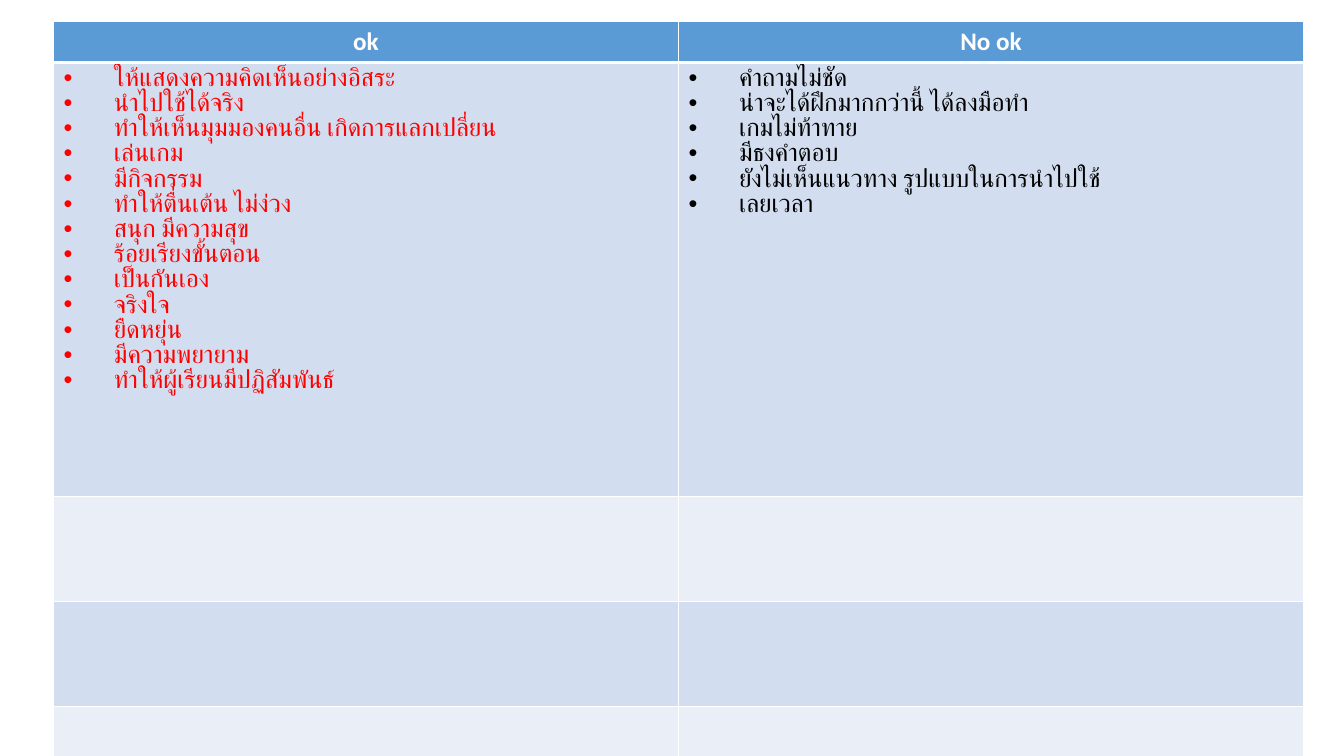
from lxml.etree import SubElement
from pptx import Presentation
from pptx.dml.color import RGBColor
from pptx.enum.text import PP_ALIGN
from pptx.oxml.ns import qn
from pptx.util import Inches, Pt

COLORS = {
    "header": "5B9BD5",
    "band_dark": "D2DEEF",
    "band_light": "EAEFF7",
    "white": "FFFFFF",
    "liked": "FF0000",
    "disliked": "000000",
}
LIKED = [
    "ให้แสดงความคิดเห็นอย่างอิสระ",
    "นำไปใช้ได้จริง",
    "ทำให้เห็นมุมมองคนอื่น เกิดการแลกเปลี่ยน",
    "เล่นเกม",
    "มีกิจกรรม",
    "ทำให้ตื่นเต้น ไม่ง่วง",
    "สนุก มีความสุข",
    "ร้อยเรียงขั้นตอน",
    "เป็นกันเอง",
    "จริงใจ",
    "ยืดหยุ่น",
    "มีความพยายาม",
    "ทำให้ผู้เรียนมีปฏิสัมพันธ์",
]
DISLIKED = [
    "คำถามไม่ชัด",
    "น่าจะได้ฝึกมากกว่านี้ ได้ลงมือทำ",
    "เกมไม่ท้าทาย",
    "มีธงคำตอบ",
    "ยังไม่เห็นแนวทาง รูปแบบในการนำไปใช้",
    "เลยเวลา",
]
ROW_HEIGHTS = [0.41, 4.31] + [1.04] * 5


class FeedbackSlide:
    """Hold the style and the current slide, and add its elements."""

    def __init__(self, deck):
        self.page = deck.slides.add_slide(deck.slide_layouts[6])
        self.size = Pt(18)

    def add_table(self, left, top, widths, heights):
        frame = self.page.shapes.add_table(
            len(heights), len(widths), Inches(left), Inches(top),
            Inches(sum(widths)), Inches(sum(heights)))
        table = frame.table
        for column, width in zip(table.columns, widths):
            column.width = Inches(width)
        for index, height in enumerate(heights):
            table.rows[index].height = Inches(height)
            band = "band_dark" if index % 2 else "band_light"
            for cell in table.rows[index].cells:
                self.style_cell(cell, band if index else "header", 1 if index else 3)
        return table

    def style_cell(self, cell, color, bottom):
        properties = cell._tc.get_or_add_tcPr()
        for side, width in (("L", 1), ("R", 1), ("T", 1), ("B", bottom)):
            line = SubElement(properties, qn(f"a:ln{side}"), w=str(Pt(width)))
            fill = SubElement(line, qn("a:solidFill"))
            SubElement(fill, qn("a:srgbClr"), val=COLORS["white"])
        cell.fill.solid()
        cell.fill.fore_color.rgb = RGBColor.from_string(COLORS[color])

    def add_text(self, paragraph, text, font, color, bold):
        span = paragraph.add_run()
        span.text = text
        span.font.size = self.size
        span.font.name = font
        span.font.bold = bold
        span.font.color.rgb = RGBColor.from_string(COLORS[color])
        SubElement(span.font._element, qn("a:cs"), typeface=font)

    def add_heading(self, cell, text):
        paragraph = cell.text_frame.paragraphs[0]
        paragraph.alignment = PP_ALIGN.CENTER
        self.add_text(paragraph, text, "Calibri", "white", True)

    def add_bullets(self, cell, items, color):
        frame = cell.text_frame
        for index, item in enumerate(items):
            paragraph = frame.add_paragraph() if index else frame.paragraphs[0]
            paragraph.line_spacing = self.size
            properties = paragraph._p.get_or_add_pPr()
            properties.set("marL", str(Inches(0.5)))
            properties.set("indent", str(Inches(-0.5)))
            SubElement(properties, qn("a:buFont"), typeface="Arial")
            SubElement(properties, qn("a:buChar"), char="•")
            self.add_text(paragraph, item, "Cabin", color, False)


def main():
    deck = Presentation()
    deck.slide_width = Inches(13.33)
    deck.slide_height = Inches(7.5)
    slide = FeedbackSlide(deck)
    table = slide.add_table(0.53, 0.21, [6.2, 6.2], ROW_HEIGHTS)
    columns = [("ok", LIKED, "liked"), ("No ok", DISLIKED, "disliked")]
    for index, (heading, items, color) in enumerate(columns):
        slide.add_heading(table.cell(0, index), heading)
        slide.add_bullets(table.cell(1, index), items, color)
    deck.save("out.pptx")


if __name__ == "__main__":
    main()
